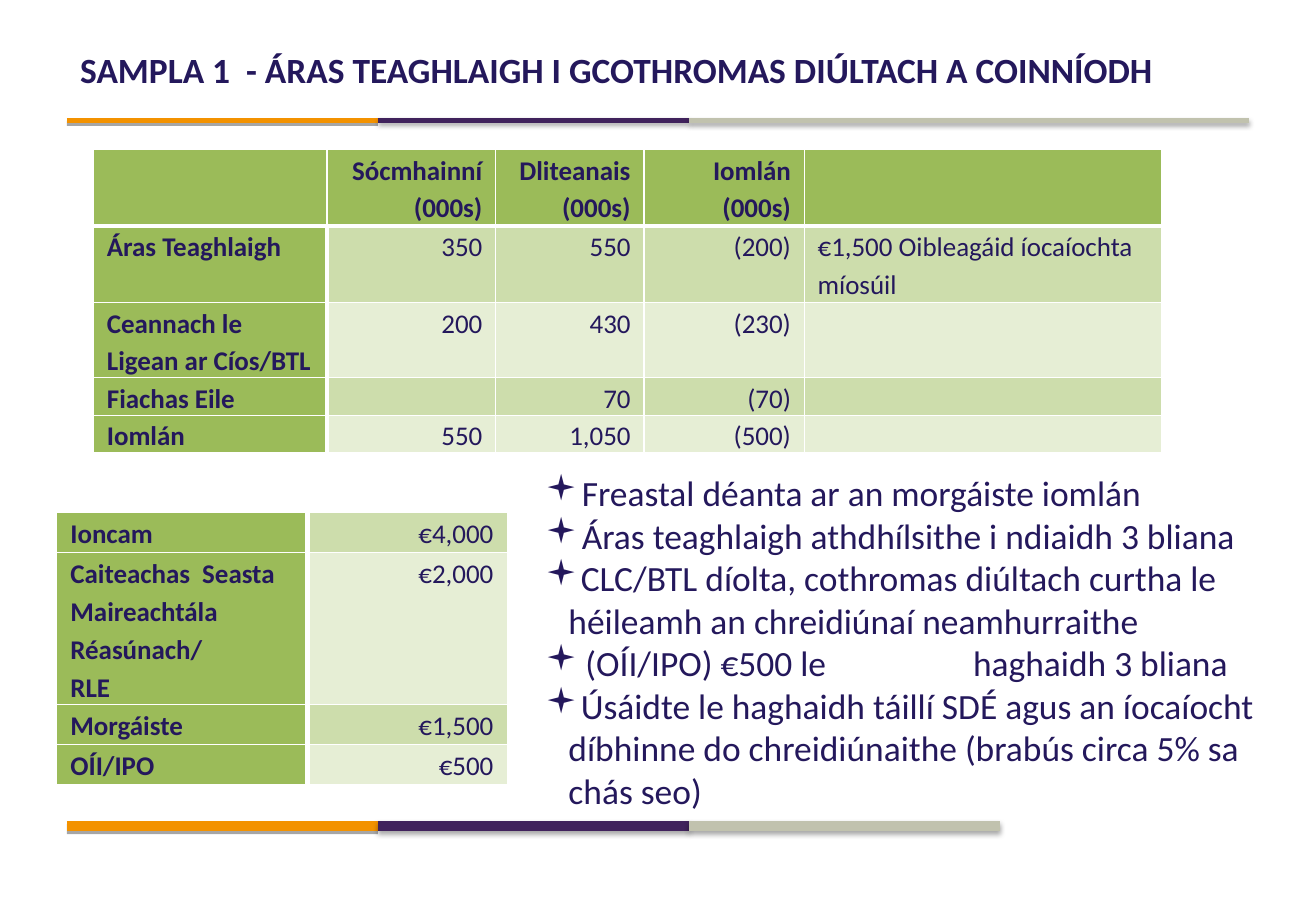
from lxml import etree
from pptx import Presentation
from pptx.dml.color import RGBColor
from pptx.enum.shapes import MSO_CONNECTOR as Connector
from pptx.enum.text import MSO_ANCHOR as Anchor, PP_ALIGN as Align
from pptx.oxml.ns import qn
from pptx.util import Inches, Pt

ORANGE = RGBColor(0xF3, 0x92, 0x00)
PURPLE = RGBColor(0x40, 0x22, 0x5C)
STONE = RGBColor(0xC1, 0xC2, 0xAE)
INK = RGBColor(0x24, 0x18, 0x5C)
GREEN = RGBColor(0x9B, 0xBB, 0x59)
BANDS = [RGBColor(0xCD, 0xDD, 0xAC), RGBColor(0xE6, 0xEE, 0xD5)]
FONT = "Calibri"

TITLE = "SAMPLA 1  - ÁRAS TEAGHLAIGH I GCOTHROMAS DIÚLTACH A COINNÍODH"
BALANCE = {
    "place": (0.77, 1.23), "inset": 0.11, "header": True,
    "columns": [1.92, 1.39, 1.22, 1.32, 2.94],
    "heights": [0.63, 0.63, 0.62, 0.31, 0.31],
    "rows": [
        ["", "Sócmhainní\n(000s)", "Dliteanais\n(000s)", "Iomlán\n(000s)", ""],
        ["Áras Teaghlaigh", "350", "550", "(200)", "€1,500 Oibleagáid íocaíochta míosúil"],
        ["Ceannach le Ligean ar Cíos/BTL", "200", "430", "(230)", ""],
        ["Fiachas Eile", "", "70", "(70)", ""],
        ["Iomlán", "550", "1,050", "(500)", ""],
    ],
}
BUDGET = {
    "place": (0.46, 4.22), "inset": 0.12, "header": False,
    "columns": [2.07, 1.65],
    "heights": [0.33, 1.25, 0.33, 0.33],
    "rows": [
        ["Ioncam", "€4,000"],
        ["Caiteachas  Seasta Maireachtála Réasúnach/\nRLE", "€2,000"],
        ["Morgáiste", "€1,500"],
        ["OÍI/IPO", "€500"],
    ],
}
POINTS = [
    (0.3, "Freastal déanta ar an morgáiste iomlán"),
    (0.3, "Áras teaghlaigh athdhílsithe i ndiaidh 3 bliana"),
    (0.19, "CLC/BTL díolta, cothromas diúltach curtha le héileamh an chreidiúnaí neamhurraithe"),
    (0.33, "(OÍI/IPO) €500 le \thaghaidh 3 bliana"),
    (0.19, "Úsáidte le haghaidh táillí SDÉ agus an íocaíocht díbhinne do chreidiúnaithe "
           "(brabús circa 5% sa chás seo)"),
]
TAB_STOP = 3.52
RULE_LEFT, RULE_STEP = 0.55, 2.56
RULES = [(0.99, 3, 10.28), (6.8, 6, RULE_LEFT + 3 * RULE_STEP)]


def add(parent, tag, **attributes):
    child = etree.SubElement(parent, qn(tag))
    for name, value in attributes.items():
        child.set(name, str(value))
    return child


def style(para, size, bold=False):
    for span in para.runs:
        span.font.name, span.font.size, span.font.bold = FONT, Pt(size), bold
        span.font.color.rgb = INK


def add_rule(page, top, weight, right):
    edges = [RULE_LEFT + RULE_STEP * step for step in range(3)] + [right]
    for index, color in enumerate([ORANGE, PURPLE, STONE]):
        line = page.shapes.add_connector(
            Connector.STRAIGHT, Inches(edges[index]), Inches(top),
            Inches(edges[index + 1]), Inches(top))
        line.line.color.rgb, line.line.width = color, Pt(weight)
        effects = add(line._element.spPr, "a:effectLst")
        shadow = add(effects, "a:outerShdw", blurRad=Pt(3.1 if index else 0),
                     dist=Pt(1.8), dir=5400000, rotWithShape=0)
        add(add(shadow, "a:srgbClr", val="000000"), "a:alpha", val=35000)


def add_borders(cell, widths):
    properties = cell._tc.get_or_add_tcPr()
    for index, (side, width) in enumerate(widths.items()):
        border = add(properties, "a:ln" + side, w=Pt(width))
        add(add(border, "a:solidFill"), "a:srgbClr", val="FFFFFF")
        properties.insert(index, border)


def add_grid(page, place, inset, header, columns, heights, rows):
    left, top = place
    table = page.shapes.add_table(
        len(rows), len(columns), Inches(left), Inches(top),
        Inches(sum(columns)), Inches(sum(heights))).table
    for column, width in zip(table.columns, columns):
        column.width = Inches(width)
    for r, (values, height) in enumerate(zip(rows, heights)):
        table.rows[r].height = Inches(height)
        for c, value in enumerate(values):
            cell = table.cell(r, c)
            in_header = header and r == 0
            strong = in_header or c == 0
            cell.margin_left = cell.margin_right = Inches(inset)
            cell.margin_top = cell.margin_bottom = 0
            cell.fill.solid()
            cell.fill.fore_color.rgb = GREEN if strong else BANDS[(r - header) % 2]
            add_borders(cell, {
                "L": 3 if c == 1 and not in_header else 1,
                "R": 3 if c == 0 and not in_header else 1,
                "T": 3 if header and r == 1 else 1,
                "B": 3 if in_header else 1})
            cell.text_frame.text = value
            for para in cell.text_frame.paragraphs:
                para.alignment = Align.RIGHT if 0 < c < 4 else Align.LEFT
                para.line_spacing = 1.15
                style(para, 16, strong)


def add_box(page, left, top, width, height):
    frame = page.shapes.add_textbox(
        Inches(left), Inches(top), Inches(width), Inches(height)).text_frame
    frame.word_wrap = True
    return frame


def add_points(page):
    frame = add_box(page, 4.39, 3.83, 6.06, 3.28)
    frame.text = "\n".join(text for _, text in POINTS)
    for para, (indent, text) in zip(frame.paragraphs, POINTS):
        properties = para._p.get_or_add_pPr()
        properties.set("marL", str(Inches(indent)))
        properties.set("indent", str(-Inches(indent)))
        add(properties, "a:buFont", typeface="Wingdings")
        add(properties, "a:buChar", char="▪")
        if "\t" in text:
            add(add(properties, "a:tabLst"), "a:tab", pos=Inches(TAB_STOP), algn="l")
        style(para, 21)


def main():
    """Build the negative equity family home example slide."""
    deck = Presentation()
    deck.slide_width, deck.slide_height = Inches(10.83), Inches(7.5)
    page = deck.slides.add_slide(deck.slide_layouts[6])
    for rule in RULES:
        add_rule(page, *rule)
    heading = add_box(page, 0.54, 0.3, 9.75, 0.54)
    heading.margin_left = heading.margin_right = Inches(0.12)
    heading.margin_top = heading.margin_bottom = Inches(0.06)
    heading.vertical_anchor = Anchor.MIDDLE
    heading.text = TITLE
    style(heading.paragraphs[0], 21, True)
    for grid in (BALANCE, BUDGET):
        add_grid(page, **grid)
    add_points(page)
    deck.save("out.pptx")


if __name__ == "__main__":
    main()
